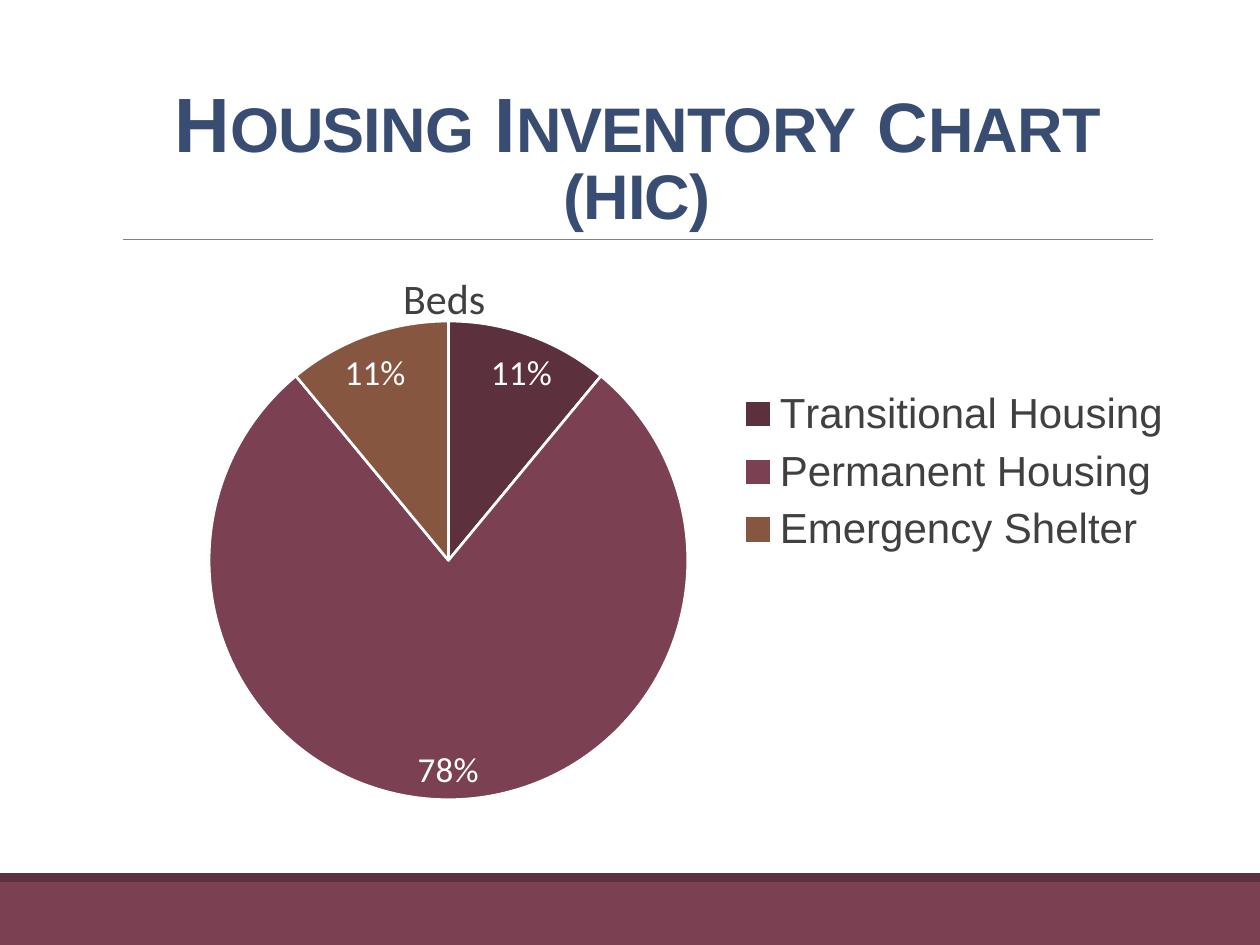
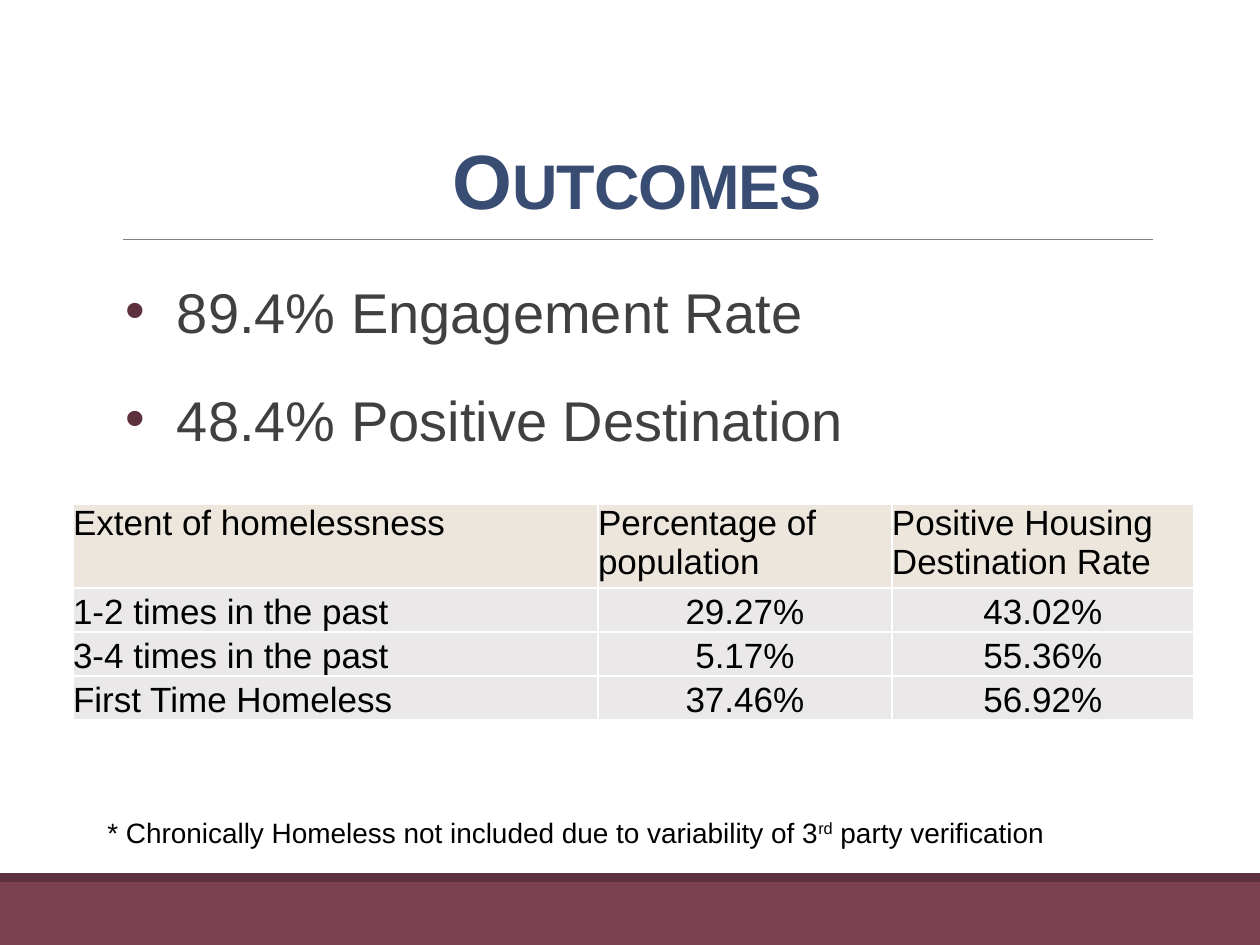
"""Build two slides on housing inventory and outcomes."""
from lxml.etree import SubElement
from pptx import Presentation
from pptx.chart.data import CategoryChartData
from pptx.dml.color import RGBColor
from pptx.enum.chart import XL_CHART_TYPE, XL_LABEL_POSITION as LABEL, XL_LEGEND_POSITION as LEGEND
from pptx.enum.shapes import MSO_CONNECTOR, MSO_SHAPE
from pptx.enum.text import MSO_ANCHOR as ANCHOR, MSO_AUTO_SIZE as FIT, PP_ALIGN as ALIGN
from pptx.oxml import parse_xml
from pptx.oxml.ns import nsdecls, qn
from pptx.util import Pt

PX = 914400 / 126
PLUM = RGBColor(0x5C, 0x30, 0x3D)
ROSE = RGBColor(0x7B, 0x41, 0x52)
BROWN = RGBColor(0x86, 0x56, 0x40)
NAVY = RGBColor(0x39, 0x4D, 0x73)
CHARCOAL = RGBColor(0x40, 0x40, 0x40)
GRAY = RGBColor(0x80, 0x80, 0x80)
SAND = RGBColor(0xEC, 0xE6, 0xDD)
MIST = RGBColor(0xEA, 0xE8, 0xE8)
WHITE = RGBColor(0xFF, 0xFF, 0xFF)
BLACK = RGBColor(0, 0, 0)


def px(*lengths):
    return [round(length * PX) for length in lengths]


def style(font, size, color, name="Arial"):
    font.name = name
    font.color.rgb = color
    if size:
        font.size = Pt(size)


deck = Presentation()
deck.slide_width, deck.slide_height = px(1260, 945)

titles = [
    (39, [("H", 44), ("OUSING", 36), (" I", 44), ("NVENTORY", 36), (" ", 44), ("C", 40), ("HART (HIC)", 36)]),
    (32, [("O", 44), ("UTCOMES", 36)]),
]
bands = [(882, 63, ROSE), (873, 9, PLUM)]
pages = []
for title_top, title_spans in titles:
    page = deck.slides.add_slide(deck.slide_layouts[5])
    pages.append(page)
    for top, height, color in bands:
        band = page.shapes.add_shape(MSO_SHAPE.RECTANGLE, *px(0, top, 1260, height))
        band.shadow.inherit = False
        band.fill.solid()
        band.fill.fore_color.rgb = color
        band.line.fill.background()
    rule = page.shapes.add_connector(MSO_CONNECTOR.STRAIGHT, *px(123, 239, 1153, 239))
    rule.line.color.rgb = GRAY
    rule.line.width = Pt(0.5)
    SubElement(rule._element.spPr, qn("a:effectLst"))

    title = page.shapes.title
    title.left, title.top, title.width, title.height = px(113, title_top, 1040, 200)
    frame = title.text_frame
    frame.auto_size = FIT.NONE
    frame.vertical_anchor = ANCHOR.BOTTOM
    para = frame.paragraphs[0]
    para.alignment = ALIGN.CENTER
    para.line_spacing = 0.85
    para._p.get_or_add_pPr().set("marL", str(px(8)[0]))
    style(para.font, None, NAVY)
    para.font.bold = True
    for words, size in title_spans:
        span = para.add_run()
        span.text = words
        span.font.size = Pt(size)
        span._r.get_or_add_rPr().set("spc", "-50")

inventory, outcomes = pages

beds = CategoryChartData()
beds.categories = ["Transitional Housing", "Permanent Housing", "Emergency Shelter"]
beds.add_series("Beds", (11, 78, 11))
chart = inventory.shapes.add_chart(XL_CHART_TYPE.PIE, *px(31, 262, 1176, 591), beds).chart
style(chart.font, 10, BLACK, "Calibri")
chart.has_title = True
chart.chart_title.text_frame.text = "Beds"
heading = chart.chart_title.text_frame.paragraphs[0]
style(heading.font, 24, CHARCOAL, "Calibri")
heading.font.bold = False
chart.has_legend = True
chart.legend.position = LEGEND.RIGHT
chart.legend.include_in_layout = False
style(chart.legend.font, 24, CHARCOAL)

plot = chart.plots[0]
plot.vary_by_categories = True
for index, color in enumerate([PLUM, ROSE, BROWN]):
    slice_format = plot.series[0].points[index].format
    slice_format.fill.solid()
    slice_format.fill.fore_color.rgb = color
    slice_format.line.color.rgb = WHITE
    slice_format.line.width = Pt(1.5)
plot.has_data_labels = True
labels = plot.data_labels
labels.show_percentage = True
labels.show_value = False
labels.number_format = "0%"
labels.number_format_is_linked = False
labels.position = LABEL.BEST_FIT
style(labels.font, 20, WHITE, "Calibri")

layouts = [
    ("c:title", "", {"x": 0.31, "y": 0}),
    ("c:plotArea", '<c:layoutTarget val="inner"/>', {"x": 0.15, "y": 0.1, "w": 0.41, "h": 0.81}),
    ("c:legend", "", {"x": 0.59, "y": 0.2, "w": 0.39, "h": 0.31}),
]
for tag, target, measures in layouts:
    part = chart._chartSpace.chart.find(qn(tag))
    for old in part.findall(qn("c:layout")):
        part.remove(old)
    modes = "".join(f'<c:{axis}Mode val="edge"/>' for axis in "xy")
    values = "".join(f'<c:{key} val="{value}"/>' for key, value in measures.items())
    layout = parse_xml(
        f'<c:layout {nsdecls("c")}><c:manualLayout>{target}{modes}{values}</c:manualLayout></c:layout>')
    before = {"c:title": "c:tx", "c:legend": "c:legendPos"}.get(tag)
    part.insert(part.index(part.find(qn(before))) + 1 if before else 0, layout)

box = outcomes.shapes.add_textbox(*px(126, 284, 1134, 588))
frame = box.text_frame
frame.word_wrap = True
frame.margin_left = frame.margin_right = 0
for index, words in enumerate(["89.4% Engagement Rate", "48.4% Positive Destination"]):
    para = frame.add_paragraph() if index else frame.paragraphs[0]
    para.text = words
    para.line_spacing = 0.8
    para.space_before = Pt(31 if index else 1)
    style(para.font, 32, CHARCOAL)
    properties = para._p.get_or_add_pPr()
    indent = px(51)[0]
    properties.set("marL", str(indent))
    properties.set("indent", str(-indent))
    bullet = [f'<a:buClr {nsdecls("a")}><a:srgbClr val="{PLUM}"/></a:buClr>',
              f'<a:buFont {nsdecls("a")} typeface="Arial"/>',
              f'<a:buChar {nsdecls("a")} char="•"/>']
    for xml in bullet:
        properties.insert(properties.index(properties.find(qn("a:defRPr"))), parse_xml(xml))

rows = [
    ("Extent of homelessness", "Percentage of population", "Positive Housing Destination Rate"),
    ("1-2 times in the past", "29.27%", "43.02%"),
    ("3-4 times in the past", "5.17%", "55.36%"),
    ("First Time Homeless", "37.46%", "56.92%"),
]
table = outcomes.shapes.add_table(4, 3, *px(73, 504, 1121, 215)).table
for column, width in zip(table.columns, px(525, 294, 302)):
    column.width = width
for row, height in zip(table.rows, px(83, 44, 44, 44)):
    row.height = height
for row_index, row in enumerate(rows):
    for column_index, words in enumerate(row):
        cell = table.cell(row_index, column_index)
        cell.text = words
        cell.margin_left = cell.margin_right = cell.margin_top = cell.margin_bottom = 0
        cell.vertical_anchor = ANCHOR.BOTTOM if row_index else ANCHOR.TOP
        para = cell.text_frame.paragraphs[0]
        para.alignment = ALIGN.CENTER if row_index and column_index else ALIGN.LEFT
        style(para.font, 20, BLACK)
        for side in ("a:lnL", "a:lnR", "a:lnT", "a:lnB"):
            edge = SubElement(cell._tc.get_or_add_tcPr(), qn(side), w=str(Pt(1)))
            SubElement(SubElement(edge, qn("a:solidFill")), qn("a:srgbClr"), val=str(WHITE))
        cell.fill.solid()
        cell.fill.fore_color.rgb = MIST if row_index else SAND

note = outcomes.shapes.add_textbox(*px(95, 809, 969, 47))
note.text_frame.word_wrap = False
note.text_frame.auto_size = FIT.SHAPE_TO_FIT_TEXT
para = note.text_frame.paragraphs[0]
style(para.font, 16, BLACK)
for words in ("* Chronically Homeless not included due to variability of 3", "rd", " party verification"):
    span = para.add_run()
    span.text = words
    if words == "rd":
        span._r.get_or_add_rPr().set("baseline", "30000")

deck.save("out.pptx")
